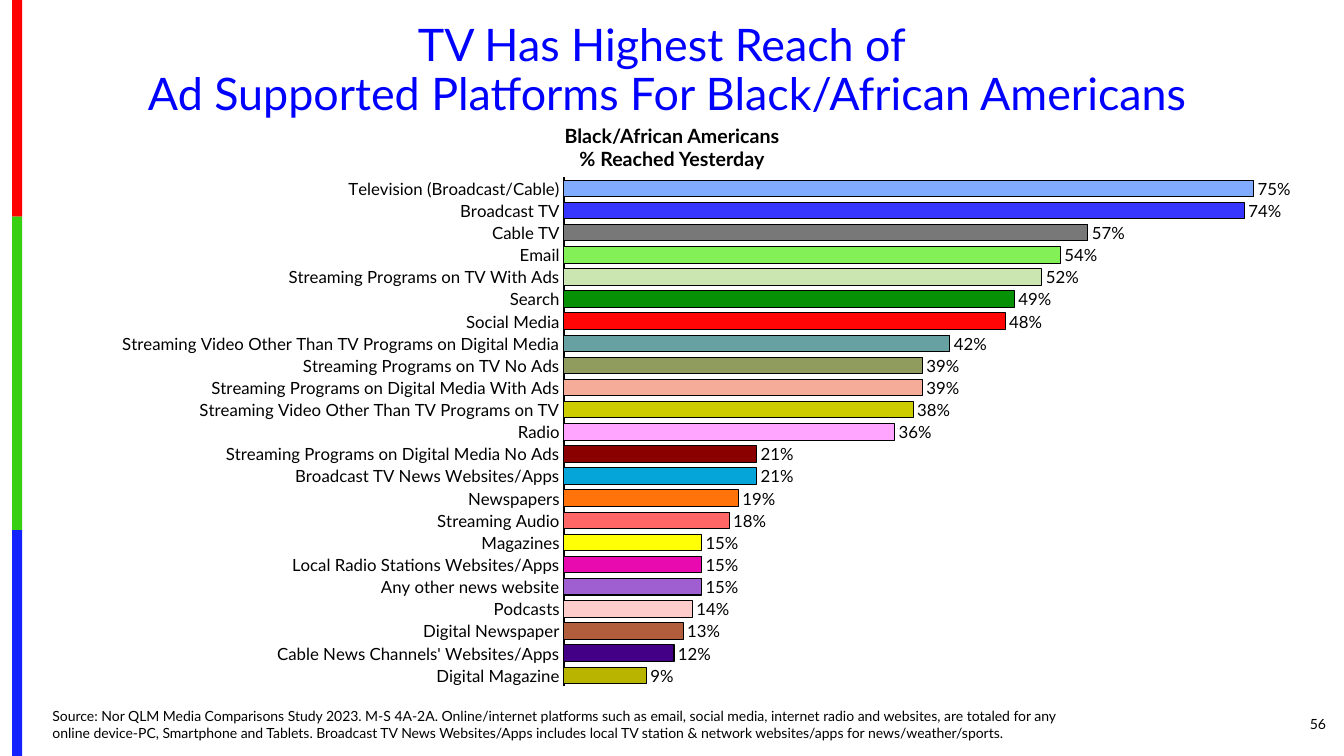
"""Build a slide that ranks media platforms by daily reach among Black/African Americans."""
import pptx
import pptx.chart.data
import pptx.dml.color
import pptx.enum.chart
import pptx.enum.shapes
import pptx.enum.text
import pptx.oxml
import pptx.oxml.ns
import pptx.util

WIDE, HIGH = 13.33, 7.5
THEME = {
    "font": "Lato", "title": "0000FF", "ink": "000000", "base": "CCCCCC",
    "head": 32, "sub": 14, "label": 12, "note": 10,
    "axis": 1.5, "edge": 0.75,
}
TITLE = ["TV Has Highest Reach of ", "Ad Supported Platforms For Black/African Americans"]
SUB = ["Black/African Americans", "% Reached Yesterday"]
NOTE = (
    "Source: Nor QLM Media Comparisons Study 2023.\u00a0M-S 4A-2A. "
    "Online/internet platforms such as email, social media, internet radio and websites, "
    "are totaled for any online device-PC, Smartphone and Tablets. "
    "Broadcast TV News Websites/Apps includes local TV station & network websites/apps "
    "for news/weather/sports."
)
PAGE = "56"
STRIPE = [("FE0000", 2.15), ("36CF12", 3.11), ("1322FE", 2.24)]
REACH = [
    ("Television (Broadcast/Cable)", 0.75, "80ABFF"),
    ("Broadcast TV", 0.74, "3636FF"),
    ("Cable TV", 0.57, "787878"),
    ("Email", 0.54, "84F058"),
    ("Streaming Programs on TV With Ads", 0.52, "CCE6B2"),
    ("Search", 0.49, "059005"),
    ("Social Media", 0.48, "FF0505"),
    ("Streaming Video Other Than TV Programs on Digital Media", 0.42, "67A1A1"),
    ("Streaming Programs on TV No Ads", 0.39, "909C5E"),
    ("Streaming Programs on Digital Media With Ads", 0.39, "F5AD99"),
    ("Streaming Video Other Than TV Programs on TV", 0.38, "CCCC00"),
    ("Radio", 0.36, "FFA4FF"),
    ("Streaming Programs on Digital Media No Ads", 0.21, "8A0000"),
    ("Broadcast TV News Websites/Apps", 0.21, "05A4D9"),
    ("Newspapers", 0.19, "FF730A"),
    ("Streaming Audio", 0.18, "FF6666"),
    ("Magazines", 0.15, "FFFF05"),
    ("Local Radio Stations Websites/Apps", 0.15, "E80AAF"),
    ("Any other news website", 0.15, "9F5FD0"),
    ("Podcasts", 0.14, "FFCCCC"),
    ("Digital Newspaper", 0.13, "B25E3C"),
    ("Cable News Channels' Websites/Apps", 0.12, "430086"),
    ("Digital Magazine", 0.09, "B8B400"),
]
CHART = (0.25, 1.42, 12.92, 5.42)
PLOT = {"x": 5.34 / CHART[2], "y": 0.34 / CHART[3],
        "w": 7.3 / CHART[2], "h": 5.05 / CHART[3]}

ALIGN = pptx.enum.text.PP_ALIGN
ANCHOR = pptx.enum.text.MSO_ANCHOR
FIT = pptx.enum.text.MSO_AUTO_SIZE


def inch(*sizes):
    return [pptx.util.Inches(size) for size in sizes]


def tint(code):
    return pptx.dml.color.RGBColor.from_string(code)


def style(font, size, color=THEME["ink"], bold=False):
    font.name, font.size, font.bold = THEME["font"], pptx.util.Pt(size), bold
    font.color.rgb = tint(color)


def place(shape, *box):
    shape.left, shape.top, shape.width, shape.height = inch(*box)


def frame(shape, anchor, fit=FIT.SHAPE_TO_FIT_TEXT):
    text = shape.text_frame
    text.word_wrap, text.auto_size, text.vertical_anchor = True, fit, anchor
    return text


def write(para, text, size, align, color=THEME["ink"], bold=False):
    para.alignment = align
    run = para.add_run()
    run.text = text
    style(run.font, size, color, bold)


def outline(line, width):
    line.color.rgb = tint(THEME["ink"])
    line.width = pptx.util.Pt(width)


def stripe(slide):
    top = 0
    for color, tall in STRIPE:
        bar = slide.shapes.add_shape(
            pptx.enum.shapes.MSO_SHAPE.RECTANGLE, *inch(0.12, top, 0.1, tall))
        bar.shadow.inherit = False
        bar.fill.solid()
        bar.fill.fore_color.rgb = tint(color)
        bar.line.fill.background()
        top += tall


def words(slide):
    title, note = slide.placeholders
    place(title, 0.41, 0.18, 12.42, 1.07)
    para = frame(title, ANCHOR.TOP).paragraphs[0]
    para.line_spacing = 0.9
    for row, line in enumerate(TITLE):
        if row:
            para.add_line_break()
        write(para, line, THEME["head"], ALIGN.CENTER, THEME["title"])

    place(note, 0.42, 6.96, 10.25, 0.44)
    para = frame(note, ANCHOR.BOTTOM).paragraphs[0]
    props = para._p.get_or_add_pPr()
    props.set("marL", "0")
    props.set("indent", "0")
    props.append(pptx.oxml.parse_xml(f"<a:buNone {pptx.oxml.ns.nsdecls('a')}/>"))
    para.space_before = pptx.util.Pt(0)
    write(para, NOTE, THEME["note"], ALIGN.LEFT)

    page = slide.shapes.add_textbox(*inch(12.17, 6.98, 1.08, 0.4))
    para = frame(page, ANCHOR.MIDDLE, FIT.NONE).paragraphs[0]
    write(para, PAGE, THEME["note"], ALIGN.RIGHT)

    sub = slide.shapes.add_textbox(*inch(WIDE / 4, 1.18, WIDE / 2, 0.57))
    text = frame(sub, ANCHOR.TOP)
    for row, line in enumerate(SUB):
        para = text.add_paragraph() if row else text.paragraphs[0]
        write(para, line, THEME["sub"], ALIGN.CENTER, bold=True)


def fix_plot(chart):
    area = chart._chartSpace.chart.plotArea
    for old in area.findall(pptx.oxml.ns.qn("c:layout")):
        area.remove(old)
    modes = "".join(f'<c:{key}Mode val="edge"/>' for key in "xy")
    sizes = "".join(f'<c:{key} val="{share}"/>' for key, share in PLOT.items())
    area.insert(0, pptx.oxml.parse_xml(
        f"<c:layout {pptx.oxml.ns.nsdecls('c')}><c:manualLayout>"
        f'<c:layoutTarget val="inner"/>{modes}{sizes}</c:manualLayout></c:layout>'))


def graph(slide):
    enum = pptx.enum.chart
    names, rates, colors = zip(*REACH)
    data = pptx.chart.data.CategoryChartData(number_format="0%")
    data.categories = names
    data.add_series("Series 1", rates)
    chart = slide.shapes.add_chart(
        enum.XL_CHART_TYPE.BAR_CLUSTERED, *inch(*CHART), data).chart
    chart.has_title = chart.has_legend = False
    style(chart.font, THEME["note"])
    fix_plot(chart)

    axis = chart.category_axis
    axis.reverse_order = True
    axis.major_tick_mark = axis.minor_tick_mark = enum.XL_TICK_MARK.NONE
    style(axis.tick_labels.font, THEME["label"])
    outline(axis.format.line, THEME["axis"])
    scale = chart.value_axis
    scale.minimum_scale, scale.maximum_scale = 0, 0.8
    scale.has_major_gridlines = scale.visible = False

    plot = chart.plots[0]
    plot.gap_width, plot.vary_by_categories = 34, False
    bars = plot.series[0]
    bars.format.fill.solid()
    bars.format.fill.fore_color.rgb = tint(THEME["base"])
    outline(bars.format.line, THEME["edge"])
    for row, color in enumerate(colors):
        look = bars.points[row].format
        look.fill.solid()
        look.fill.fore_color.rgb = tint(color)
        outline(look.line, THEME["edge"])
    tags = bars.data_labels
    tags.show_value = True
    tags.number_format, tags.number_format_is_linked = "0%", False
    tags.position = enum.XL_LABEL_POSITION.OUTSIDE_END
    style(tags.font, THEME["label"])


def main():
    deck = pptx.Presentation()
    deck.slide_width, deck.slide_height = inch(WIDE, HIGH)
    slide = deck.slides.add_slide(deck.slide_layouts[1])
    stripe(slide)
    words(slide)
    graph(slide)
    deck.save("out.pptx")


if __name__ == "__main__":
    main()
